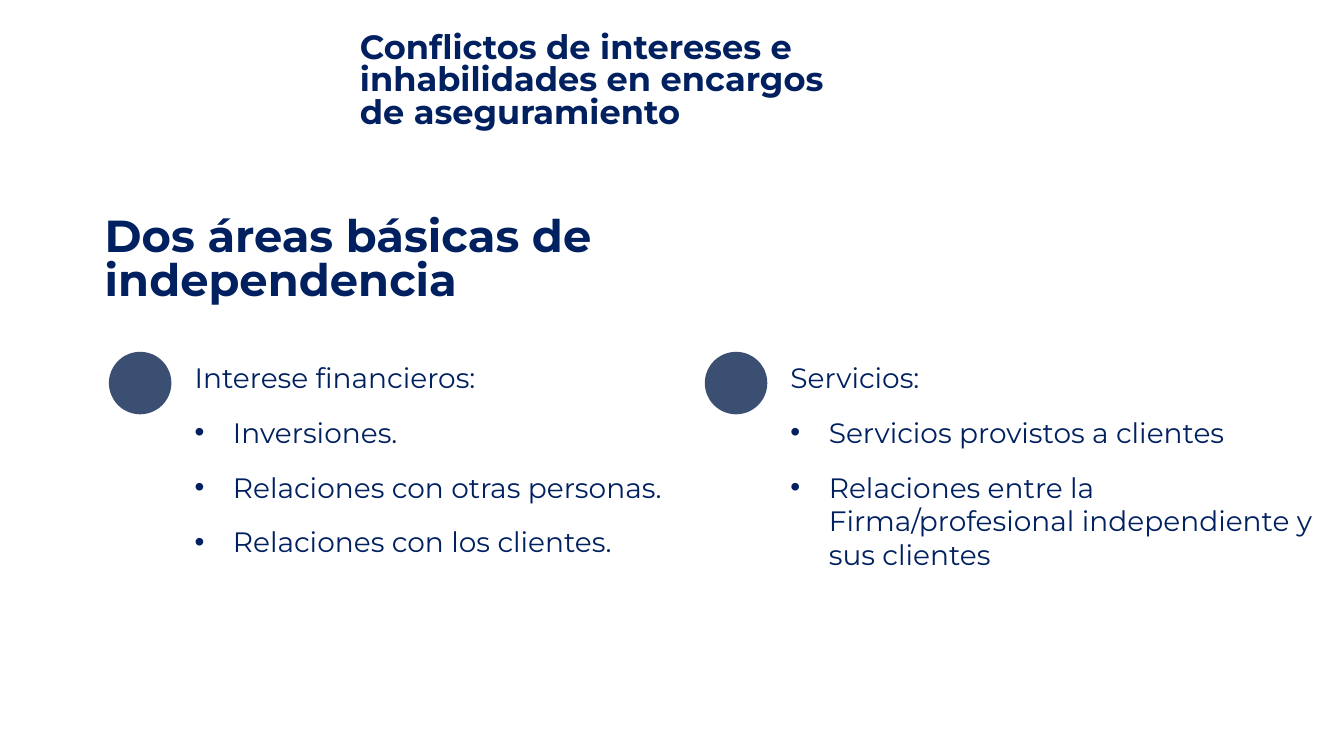
from dataclasses import dataclass

from lxml.etree import SubElement
from pptx import Presentation
from pptx.dml.color import RGBColor
from pptx.enum.shapes import MSO_SHAPE
from pptx.enum.text import MSO_ANCHOR, MSO_AUTO_SIZE, PP_ALIGN
from pptx.oxml.ns import qn
from pptx.slide import Slide
from pptx.util import Inches, Pt

NAVY = RGBColor(0x00, 0x20, 0x60)
SLATE = RGBColor(0x3B, 0x4F, 0x72)
FONT = "Montserrat"
HANG = Inches(0.38)


@dataclass
class Area:
    placeholder: int
    left: float
    height: float
    heading: str
    items: list[str]


AREAS = [
    Area(1, 1.08, 2.08, "Interese financieros:",
         ["Inversiones.", "Relaciones con otras personas.",
          "Relaciones con los clientes."]),
    Area(2, 6.99, 2.2, "Servicios:",
         ["Servicios provistos a clientes",
          "Relaciones entre la Firma/profesional independiente y sus clientes"]),
]


def place(sp, left: float, top: float, width: float, height: float) -> None:
    sp.left, sp.top = Inches(left), Inches(top)
    sp.width, sp.height = Inches(width), Inches(height)


def add_run(p, text: str, size: int, bold: bool = False) -> None:
    r = p.add_run()
    r.text = text
    r.font.name = FONT
    r.font.size = Pt(size)
    r.font.bold = bold
    r.font.color.rgb = NAVY


def write_title(sp, text: str, size: int) -> None:
    tf = sp.text_frame
    tf.word_wrap = True
    tf.auto_size = MSO_AUTO_SIZE.NONE
    tf.vertical_anchor = MSO_ANCHOR.MIDDLE
    p = tf.paragraphs[0]
    p.alignment = PP_ALIGN.LEFT
    p.line_spacing = 0.8
    add_run(p, text, size, bold=True)


def set_bullet(p, bulleted: bool) -> None:
    pPr = p._p.get_or_add_pPr()
    pPr.set("marL", str(HANG if bulleted else 0))
    pPr.set("indent", str(-HANG if bulleted else 0))
    if bulleted:
        SubElement(pPr, qn("a:buFont"), typeface="Arial")
        SubElement(pPr, qn("a:buChar"), char="•")
    else:
        SubElement(pPr, qn("a:buNone"))


def add_area(s: Slide, area: Area) -> None:
    # Round marker
    dot = s.shapes.add_shape(MSO_SHAPE.OVAL, Inches(area.left), Inches(3.49),
                             Inches(0.62), Inches(0.62))
    dot.shadow.inherit = False
    dot.fill.solid()
    dot.fill.fore_color.rgb = SLATE
    dot.line.fill.background()

    # Heading and its list
    sp = s.placeholders[area.placeholder]
    place(sp, area.left + 0.75, 3.53, 5.42, area.height)
    tf = sp.text_frame
    tf.word_wrap = True
    tf.auto_size = MSO_AUTO_SIZE.SHAPE_TO_FIT_TEXT
    for i, text in enumerate([area.heading, *area.items]):
        p = tf.add_paragraph() if i else tf.paragraphs[0]
        set_bullet(p, bulleted=i > 0)
        p.space_before = Pt(0)
        p.space_after = Pt(15)
        add_run(p, text, 20)


def main() -> None:
    prs = Presentation()
    prs.slide_width, prs.slide_height = Inches(13.33), Inches(7.5)
    s = prs.slides.add_slide(prs.slide_layouts[3])

    # Title and subtitle
    place(s.shapes.title, 3.47, 0.09, 5.15, 1.45)
    write_title(s.shapes.title, "Conflictos de intereses e inhabilidades "
                "en encargos de aseguramiento", 24)
    subtitle = s.shapes.add_textbox(Inches(0.94), Inches(1.87),
                                    Inches(7.56), Inches(1.45))
    write_title(subtitle, "Dos áreas básicas de independencia", 32)

    # Two areas of independence
    for area in AREAS:
        add_area(s, area)

    prs.save("out.pptx")


if __name__ == "__main__":
    main()
